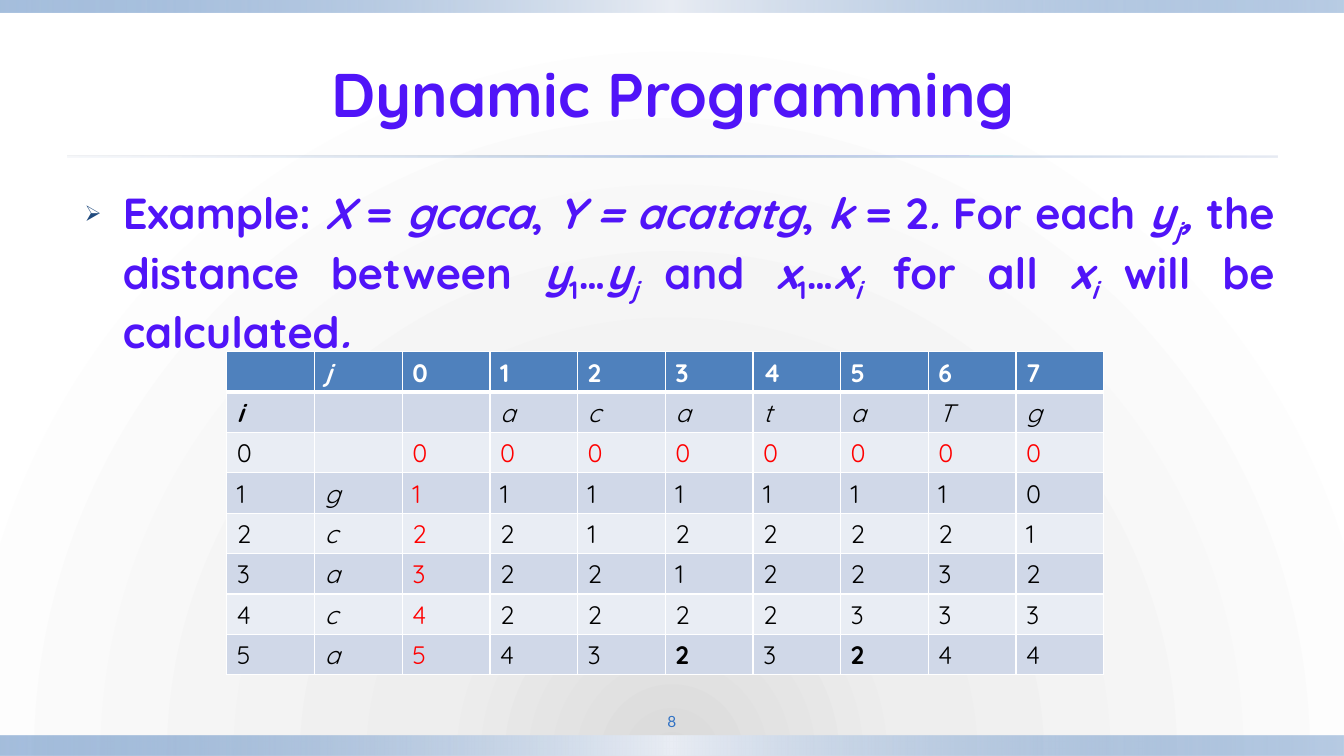
from lxml import etree
from pptx import Presentation
from pptx.dml.color import RGBColor
from pptx.enum.shapes import MSO_SHAPE
from pptx.enum.text import MSO_ANCHOR, PP_ALIGN
from pptx.oxml.ns import qn
from pptx.util import Pt

PX = 9144  # EMU per px, 100 px to the inch
RECT = MSO_SHAPE.RECTANGLE
TOP, MIDDLE = MSO_ANCHOR.TOP, MSO_ANCHOR.MIDDLE
CENTER, JUSTIFY = PP_ALIGN.CENTER, PP_ALIGN.JUSTIFY
HEADING_FONT, NUMBER_FONT = "Quicksand", "Lato"

COLORS = {
    "violet": "5014F8", "number": "3172C4", "bullet": "1F497D",
    "header": "4F81BD", "band_dark": "D0D8E8", "band_light": "E9EDF4",
    "white": "FFFFFF", "black": "000000", "red": "FF0000",
    "glow": "DADADA", "haze": "EEEEEE",
}

BAR_STOPS = [(0, "header", 50), (50, "band_light", 100), (100, "header", 40)]
RULE_STOPS = [(0, "band_dark", 20), (50, "header", 40), (100, "band_dark", 50)]
PAGE_STOPS = [(0, "glow", 100), (31, "haze", 100), (100, "white", 100)]

# Each run with its style: i = italic, s = subscript
EXAMPLE = [
    ("Example: ", ""), ("X ", "i"), ("= ", ""), ("gcaca", "i"), (",", ""),
    (" Y = acatatg", "i"), (", ", ""), ("k ", "i"), ("= 2", ""), (". ", "i"),
    ("For each ", ""), ("y", "i"), ("j", "is"), (", ", "i"),
    ("the distance between ", ""), ("y", "i"), ("1", "s"), ("…", ""),
    ("y", "i"), ("j ", "is"), ("and ", ""), ("x", "i"), ("1", "s"), ("…", ""),
    ("x", "i"), ("i", "is"), (" for all ", ""), ("x", "i"), ("i ", "is"),
    ("will be calculated", ""), (".", "i"),
]

X_LETTERS = "gcaca"
Y_LETTERS = "acataTg"
DISTANCES = ["00000000", "11111110", "22122221",
             "32212232", "42222333", "54323244"]
MATCHES = {(7, 5), (7, 7)}


def rgb(color):
    return RGBColor.from_string(COLORS[color])


def add_child(parent, tag, **attributes):
    child = etree.SubElement(parent, qn(tag))
    for key, value in attributes.items():
        child.set(key, str(value))
    return child


def apply_gradient(fill, root, stops, radial=False):
    """Give the fill found under root its own stops, along a line or a circle."""
    fill.gradient()
    gradient = root.find(".//" + qn("a:gradFill"))
    for child in list(gradient):
        gradient.remove(child)
    stop_list = add_child(gradient, "a:gsLst")
    for position, color, opacity in stops:
        stop = add_child(stop_list, "a:gs", pos=position * 1000)
        shade = add_child(stop, "a:srgbClr", val=COLORS[color])
        if opacity < 100:
            add_child(shade, "a:alpha", val=opacity * 1000)
    if radial:
        circle = add_child(gradient, "a:path", path="circle")
        add_child(circle, "a:fillToRect", l=50000, t=150000, r=50000, b=0)
    else:
        add_child(gradient, "a:lin", ang=0, scaled=0)


def add_bar(slide, left, top, width, height, stops):
    bar = slide.shapes.add_shape(RECT, left * PX, top * PX, width * PX, height * PX)
    bar.shadow.inherit = False
    bar.line.fill.background()
    apply_gradient(bar.fill, bar.element.spPr, stops)


def add_run(paragraph, text, font, size, color, bold=False, italic=False):
    run = paragraph.add_run()
    run.text = text
    run.font.name = font
    run.font.size = Pt(size)
    run.font.bold = bold
    run.font.italic = italic
    run.font.color.rgb = rgb(color)
    return run


def add_text_area(slide, left, top, width, height, anchor, align, inset=10):
    """Add an empty text box and return its first paragraph."""
    box = slide.shapes.add_textbox(left * PX, top * PX, width * PX, height * PX)
    frame = box.text_frame
    frame.word_wrap = True
    frame.vertical_anchor = anchor
    frame.margin_left = frame.margin_right = inset * PX
    frame.margin_top = frame.margin_bottom = 5 * PX
    paragraph = frame.paragraphs[0]
    paragraph.alignment = align
    return paragraph


def add_bullet(paragraph):
    """Set spacing, hanging indent and arrow bullet."""
    properties = paragraph._p.get_or_add_pPr()
    properties.set("marL", str(38 * PX))
    properties.set("indent", str(-38 * PX))
    add_child(add_child(properties, "a:spcBef"), "a:spcPct", val=20000)
    add_child(add_child(properties, "a:spcAft"), "a:spcPts", val=600)
    add_child(add_child(properties, "a:buClr"), "a:srgbClr", val=COLORS["bullet"])
    add_child(properties, "a:buSzPct", val=50000)
    add_child(properties, "a:buChar", char="➢")


def add_example(slide):
    paragraph = add_text_area(slide, 74, 180, 1200, 156, TOP, JUSTIFY)
    add_bullet(paragraph)
    for text, style in EXAMPLE:
        run = add_run(paragraph, text, HEADING_FONT, 31, "violet", True, "i" in style)
        if "s" in style:
            run._r.get_or_add_rPr().set("baseline", "-25000")


def set_borders(cell, row):
    widths = {"L": 1, "R": 1, "T": 3 if row == 1 else 1, "B": 3 if row == 0 else 1}
    properties = cell._tc.get_or_add_tcPr()
    for side, width in widths.items():
        border = add_child(properties, f"a:ln{side}", w=Pt(width))
        add_child(add_child(border, "a:solidFill"), "a:srgbClr", val=COLORS["white"])


def cell_colors(row, column):
    """Return the fill and text colours of a cell."""
    if row == 0:
        return "header", "white"
    is_start = row >= 2 and column >= 2 and 2 in (row, column)
    return ("band_dark" if row % 2 else "band_light"), ("red" if is_start else "black")


def add_distance_table(slide):
    rows = [["", "j", *"01234567"], ["i", "", "", *Y_LETTERS]]
    for index, distances in enumerate(DISTANCES):
        letter = X_LETTERS[index - 1] if index else ""
        rows.append([str(index), letter, *distances])
    row_count, column_count = len(rows), len(rows[0])
    table = slide.shapes.add_table(row_count, column_count, 225 * PX, 349 * PX,
                                   column_count * 87 * PX, row_count * 40 * PX).table
    for row, texts in enumerate(rows):
        for column, text in enumerate(texts):
            cell = table.cell(row, column)
            set_borders(cell, row)
            fill, color = cell_colors(row, column)
            cell.fill.solid()
            cell.fill.fore_color.rgb = rgb(fill)
            paragraph = cell.text_frame.paragraphs[0]
            if text:
                bold = row == 0 or text == "i" or (row, column) in MATCHES
                add_run(paragraph, text, HEADING_FONT, 18, color, bold, text.isalpha())
            else:
                paragraph.font.size = Pt(18)


def main():
    presentation = Presentation()
    presentation.slide_width = 1333 * PX
    presentation.slide_height = 750 * PX
    slide = presentation.slides.add_slide(presentation.slide_layouts[6])
    apply_gradient(slide.background.fill, slide.element, PAGE_STOPS, radial=True)

    add_bar(slide, 0, 730, 1333, 20, BAR_STOPS)
    add_bar(slide, 0, 0, 1333, 12, BAR_STOPS)
    add_bar(slide, 67, 154, 1200, 2, RULE_STOPS)

    page_number = add_text_area(slide, 600, 700, 133, 31, MIDDLE, CENTER, inset=5)
    add_run(page_number, "8", NUMBER_FONT, 11, "number")
    title = add_text_area(slide, 68, 30, 1200, 125, MIDDLE, CENTER)
    add_run(title, "Dynamic Programming", HEADING_FONT, 44, "violet", bold=True)
    add_example(slide)
    add_distance_table(slide)
    presentation.save("out.pptx")


if __name__ == "__main__":
    main()
